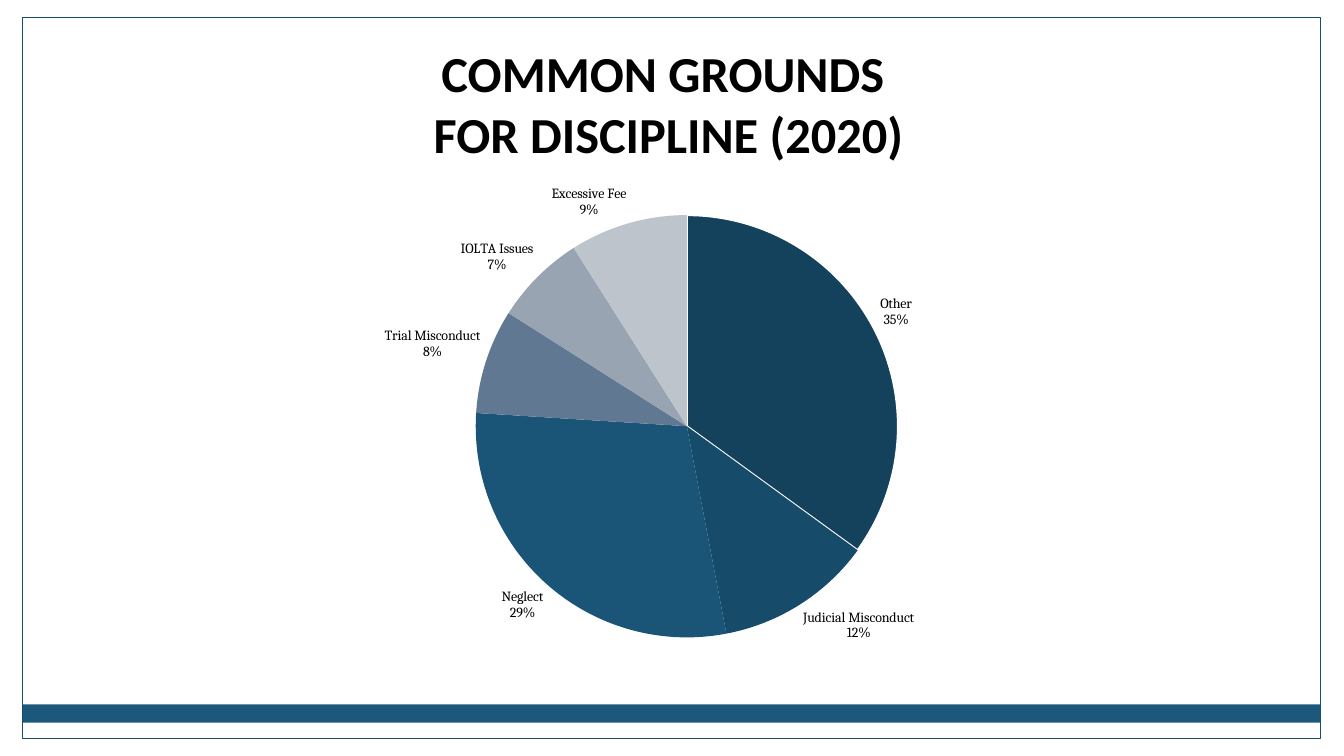
from lxml import etree
from pptx import Presentation
from pptx.chart.data import CategoryChartData
from pptx.dml.color import RGBColor
from pptx.enum import chart as charts, shapes, text
from pptx.oxml import ns
from pptx.util import Cm, Pt

GROUNDS = [
    ("Other", 35, "14415C"),
    ("Judicial Misconduct", 12, "174B6A"),
    ("Neglect", 29, "1A5476"),
    ("Trial Misconduct", 8, "607891"),
    ("IOLTA Issues", 7, "98A4B1"),
    ("Excessive Fee", 9, "BDC4CC"),
]


def color(hex_string):
    return RGBColor.from_string(hex_string)


def add_border(slide, left, top, width, height):
    """Outline the slide and lay a solid band near the bottom of the outline."""
    band = slide.shapes.add_shape(
        shapes.MSO_SHAPE.RECTANGLE, left, top + height - Cm(0.87), width, Cm(0.46))
    band.fill.solid()
    band.fill.fore_color.rgb = color("1B587C")
    band.line.fill.background()
    outline = slide.shapes.add_shape(
        shapes.MSO_SHAPE.RECTANGLE, left, top, width, height)
    outline.fill.background()
    outline.line.color.rgb = color("184E6D")
    outline.line.width = Pt(0.75)
    for part in (band, outline):
        part.shadow.inherit = False


def add_title(slide, left, top, width, height):
    frame = slide.shapes.add_textbox(left, top, width, height).text_frame
    frame.word_wrap = True
    frame.vertical_anchor = text.MSO_ANCHOR.BOTTOM
    title = frame.paragraphs[0]
    title.text = "COMMON GROUNDS \vFOR DISCIPLINE (2020)"
    title.alignment = text.PP_ALIGN.CENTER
    title.font.name = "Calibri"
    title.font.size = Pt(36)
    title.font.bold = True
    title.font.color.rgb = color("000000")


def fix_plot_area(chart, **fractions):
    """Place the pie by fractions (x, y, w, h) of the chart's box."""
    area = chart._chartSpace.chart.plotArea
    for old in area.findall(ns.qn("c:layout")):
        area.remove(old)
    layout = etree.Element(ns.qn("c:layout"))
    manual = etree.SubElement(layout, ns.qn("c:manualLayout"))
    settings = {"layoutTarget": "inner", "xMode": "edge", "yMode": "edge", **fractions}
    for tag, value in settings.items():
        etree.SubElement(manual, ns.qn(f"c:{tag}")).set("val", str(value))
    area.insert(0, layout)


def label_slices(plot):
    plot.has_data_labels = True
    labels = plot.data_labels
    labels.show_value = False
    labels.show_category_name = True
    labels.show_percentage = True
    labels.number_format = "0%"
    labels.number_format_is_linked = False
    labels.position = charts.XL_LABEL_POSITION.OUTSIDE_END
    labels.font.name = "Cambria"
    labels.font.size = Pt(10)
    labels.font.color.rgb = color("000000")
    separator = etree.Element(ns.qn("c:separator"))
    separator.text = "\n"
    percent = labels._element.find(ns.qn("c:showPercent"))
    bubble = labels._element.find(ns.qn("c:showBubbleSize"))
    (percent if bubble is None else bubble).addnext(separator)


def add_grounds_pie(slide, left, top, width, height):
    data = CategoryChartData()
    data.categories = [name for name, _, _ in GROUNDS]
    data.add_series("Series 1", [share for _, share, _ in GROUNDS])
    chart = slide.shapes.add_chart(
        charts.XL_CHART_TYPE.PIE, left, top, width, height, data).chart
    chart.has_title = False
    chart.has_legend = False
    chart.font.name = "Cambria"
    chart.font.size = Pt(10)
    chart.font.color.rgb = color("000000")
    fix_plot_area(chart, x=0.345, y=0.093, w=0.338, h=0.838)

    pie = chart.plots[0]
    pie.vary_by_categories = True
    label_slices(pie)
    points = pie.series[0].points
    for index, (_, _, shade) in enumerate(GROUNDS):
        slice_format = points[index].format
        slice_format.fill.solid()
        slice_format.fill.fore_color.rgb = color(shade)
        slice_format.line.fill.background()
    other_line = points[0].format.line
    other_line.color.rgb = color("FFFFFF")
    other_line.width = Pt(1.5)


def main():
    deck = Presentation()
    deck.slide_width, deck.slide_height = Cm(33.87), Cm(19.05)
    slide = deck.slides.add_slide(deck.slide_layouts[6])
    add_border(slide, Cm(0.56), Cm(0.43), Cm(32.72), Cm(18.19))
    add_title(slide, Cm(2.46), Cm(1.9), Cm(28.78), Cm(2.34))
    add_grounds_pie(slide, Cm(1.12), Cm(4.24), Cm(31.5), Cm(12.7))
    deck.save("out.pptx")


if __name__ == "__main__":
    main()
